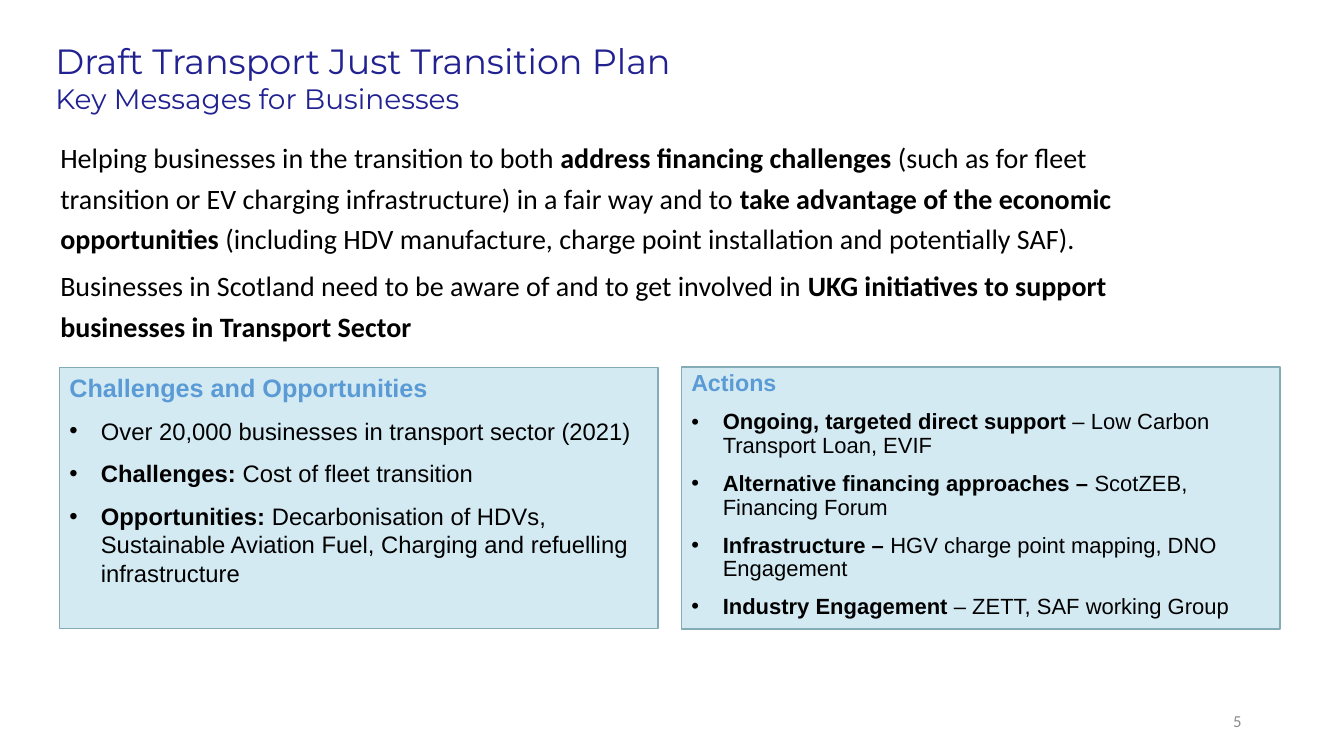
from pptx import Presentation
from pptx.dml.color import RGBColor
from pptx.enum.shapes import MSO_SHAPE
from pptx.enum.text import MSO_ANCHOR, MSO_AUTO_SIZE, PP_ALIGN
from pptx.oxml.ns import qn
from pptx.util import Pt
from lxml.etree import SubElement

BLACK = "000000"
HEADING_BLUE = "5B9BD5"


def colour(value):
    return RGBColor.from_string(value)


def apply_format(target, values):
    for name, value in values.items():
        setattr(target, name, value)


class SlideBuilder:
    title_colour = "212192"
    number_colour = "8C8C8C"
    panel_fill = "D4EAF3"
    panel_line = "84ACB6"
    bullet_indent = 22.5

    def __init__(self, slide):
        self.slide = slide

    def frame(self, shape, anchor=MSO_ANCHOR.TOP):
        text_frame = shape.text_frame
        apply_format(text_frame, {"word_wrap": True,
                                  "auto_size": MSO_AUTO_SIZE.NONE,
                                  "vertical_anchor": anchor})
        return text_frame

    def run(self, paragraph, text, font, size, text_colour, bold=False):
        run = paragraph.add_run()
        run.text = text
        apply_format(run.font, {"name": font, "size": Pt(size), "bold": bold})
        run.font.color.rgb = colour(text_colour)

    def paragraph(self, text_frame, index, space, spacing, left=0, hanging=0):
        paragraph = text_frame.add_paragraph() if index else text_frame.paragraphs[0]
        properties = paragraph._p.get_or_add_pPr()
        properties.set("marL", str(Pt(left)))
        properties.set("indent", str(Pt(-hanging)))
        if hanging:
            SubElement(properties, qn("a:buFont"), typeface="Arial")
            SubElement(properties, qn("a:buChar"), char="•")
        apply_format(paragraph, {"alignment": PP_ALIGN.LEFT,
                                 "line_spacing": spacing,
                                 "space_before": Pt(space if index else 0)})
        return paragraph

    def title(self, box, heading, subtitle):
        shape = self.slide.shapes.title
        apply_format(shape, dict(zip(("left", "top", "width", "height"), map(Pt, box))))
        paragraph = self.paragraph(self.frame(shape, MSO_ANCHOR.MIDDLE), 0, 0, 1.0)
        self.run(paragraph, heading, "Montserrat", 25, self.title_colour)
        paragraph.add_line_break()
        self.run(paragraph, subtitle, "Montserrat", 20, self.title_colour)

    def message(self, box, messages):
        text_frame = self.frame(self.slide.shapes.add_textbox(*map(Pt, box)))
        for index, parts in enumerate(messages):
            paragraph = self.paragraph(text_frame, index, 5, 1.2, left=36)
            for text, bold in parts:
                self.run(paragraph, text, "Calibri", 20, BLACK, bold)

    def panel(self, box, heading, items, heading_size, item_size, spacing):
        shape = self.slide.shapes.add_shape(MSO_SHAPE.RECTANGLE, *map(Pt, box))
        shape.shadow.inherit = False
        shape.fill.solid()
        shape.fill.fore_color.rgb = colour(self.panel_fill)
        shape.line.color.rgb = colour(self.panel_line)
        shape.line.width = Pt(1)
        text_frame = self.frame(shape)
        paragraph = self.paragraph(text_frame, 0, 0, spacing)
        self.run(paragraph, heading, "Arial", heading_size, HEADING_BLUE, True)
        for index, parts in enumerate(items, 1):
            paragraph = self.paragraph(text_frame, index, 10, spacing,
                                       self.bullet_indent, self.bullet_indent)
            for text, bold in parts:
                self.run(paragraph, text, "Arial", item_size, BLACK, bold)

    def page_number(self, box, number):
        shape = self.slide.shapes.add_textbox(*map(Pt, box))
        paragraph = self.frame(shape, MSO_ANCHOR.MIDDLE).paragraphs[0]
        paragraph.alignment = PP_ALIGN.RIGHT
        self.run(paragraph, number, "Calibri", 12, self.number_colour)


MESSAGES = [
    [("Helping businesses in the transition to both ", False),
     ("address financing challenges ", True),
     ("(such as for fleet transition or EV charging infrastructure) "
      "in a fair way and to ", False),
     ("take advantage of the economic opportunities ", True),
     ("(including HDV manufacture, charge point installation "
      "and potentially SAF).", False)],
    [("Businesses in Scotland need to be aware of and to get involved in ", False),
     ("UKG initiatives to support businesses in Transport Sector", True)],
]
CHALLENGES = [
    [("Over 20,000 businesses in transport sector (2021)", False)],
    [("Challenges: ", True), ("Cost of fleet transition", False)],
    [("Opportunities:", True),
     (" Decarbonisation of HDVs, Sustainable Aviation Fuel, "
      "Charging and refuelling infrastructure", False)],
]
ACTIONS = [
    [("Ongoing, targeted direct support ", True),
     ("– Low Carbon Transport Loan, EVIF", False)],
    [("Alternative financing approaches – ", True),
     ("ScotZEB, Financing Forum", False)],
    [("Infrastructure – ", True),
     ("HGV charge point mapping, DNO Engagement", False)],
    [("Industry Engagement", True), (" – ZETT, SAF working Group", False)],
]


def main():
    presentation = Presentation()
    presentation.slide_width = Pt(960)
    presentation.slide_height = Pt(540)
    builder = SlideBuilder(presentation.slides.add_slide(presentation.slide_layouts[5]))

    # Title and key messages
    builder.title((32.4, 18.7, 828, 73.4),
                  "Draft Transport Just Transition Plan", "Key Messages for Businesses")
    builder.message((0, 92.2, 828, 319), MESSAGES)

    # Panels
    builder.panel((42.5, 262.3, 427.7, 186.5), "Challenges and Opportunities",
                  CHALLENGES, 18, 17, 1.0)
    builder.panel((486.7, 262.1, 427.7, 187.2), "Actions", ACTIONS, 16.6, 15.7, 0.9)

    # Slide number
    builder.page_number((678, 500.5, 216, 28.8), "5")

    presentation.save("out.pptx")


if __name__ == "__main__":
    main()
